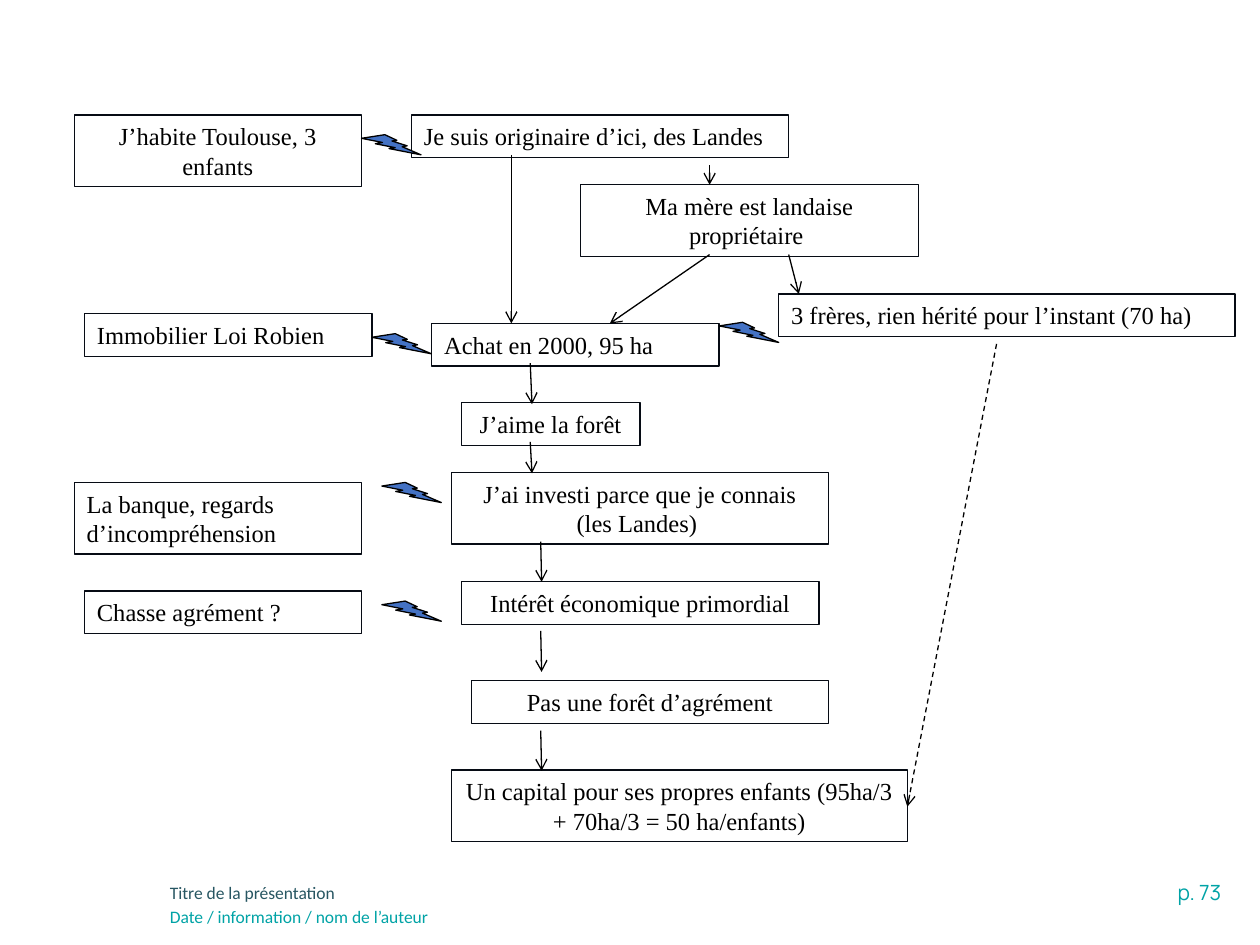
"""Build the slide that maps a forest owner's reasoning."""
from lxml import etree
from pptx import Presentation
from pptx import util as u
from pptx.dml.color import RGBColor
from pptx.enum import dml, shapes, text
from pptx.oxml.ns import qn

LEFT, CENTER, RIGHT = text.PP_ALIGN.LEFT, text.PP_ALIGN.CENTER, text.PP_ALIGN.RIGHT
ONE_LINE, TWO_LINES = 24.5, 41
TEAL = "00A3A6"

STATEMENTS = [
    ("J’habite Toulouse, 3 enfants", 42.5, 65.7, 164, TWO_LINES, CENTER),
    ("Je suis originaire d’ici, des Landes", 235.2, 65.7, 215.5, ONE_LINE, LEFT),
    ("Ma mère est landaise propriétaire ", 331.7, 105.6, 193, TWO_LINES, CENTER),
    ("3 frères, rien hérité pour l’instant (70 ha)", 445, 168, 260.8, ONE_LINE, LEFT),
    ("Achat en 2000, 95 ha", 246.7, 184.8, 164.3, ONE_LINE, LEFT),
    ("J’aime la forêt", 263.7, 230.2, 102, ONE_LINE, CENTER),
    ("Immobilier Loi Robien", 48.3, 179.2, 164.3, ONE_LINE, LEFT),
    ("J’ai investi parce que je connais (les Landes) ", 258, 270, 215.5, TWO_LINES, CENTER),
    ("La banque, regards d’incompréhension", 42.5, 275.7, 164, TWO_LINES, LEFT),
    ("Chasse agrément ?", 48.3, 337.7, 158.5, ONE_LINE, LEFT),
    ("Intérêt économique primordial", 263.7, 332.4, 204.3, ONE_LINE, CENTER),
    ("Pas une forêt d’agrément", 269.3, 388.9, 204.3, ONE_LINE, CENTER),
    ("Un capital pour ses propres enfants (95ha/3 + 70ha/3 = 50 ha/enfants)",
     258, 440, 260.5, TWO_LINES, CENTER),
]

ARROWS = [
    (405.5, 94.5, 405.5, 105.6),
    (450.7, 145.5, 456.5, 168),
    (405.5, 145.5, 348.5, 184.8),
    (292.2, 88.5, 292.2, 184.8),
    (303, 207.5, 304, 231),
    (303, 252.5, 304, 270.5),
    (309, 309.5, 309.5, 332.5),
    (309, 360.5, 309.5, 384),
    (309, 417.5, 309.5, 440.5),
]

CONFLICTS = [(206.6, 77), (212.5, 190.7), (411, 184.2), (218.2, 275.7), (218.2, 343.5)]


def color(value):
    """Return the colour for a hex string."""
    return RGBColor.from_string(value)


def style_line(line, value, width=0.75):
    """Give a line its colour and width."""
    line.color.rgb = color(value)
    line.width = u.Pt(width)


def add_text(slide, words, left, top, width, height, *, font="Times New Roman",
             size=14, ink="000000", align=LEFT):
    """Add a wrapped text box and return it."""
    shape = slide.shapes.add_textbox(u.Pt(left), u.Pt(top), u.Pt(width), u.Pt(height))
    frame = shape.text_frame
    frame.word_wrap = True
    frame.auto_size = text.MSO_AUTO_SIZE.SHAPE_TO_FIT_TEXT
    paragraph = frame.paragraphs[0]
    paragraph.alignment = align
    run = paragraph.add_run()
    run.text = words
    run.font.name = font
    run.font.size = u.Pt(size)
    run.font.color.rgb = color(ink)
    return shape


def add_statement(slide, words, left, top, width, height, align):
    """Add a framed statement."""
    shape = add_text(slide, words, left, top, width, height, align=align)
    style_line(shape.line, "060B14")


def add_arrow(slide, x1, y1, x2, y2, dashed=False):
    """Add an arrow from the first point to the second."""
    arrow = slide.shapes.add_connector(
        shapes.MSO_CONNECTOR.STRAIGHT, u.Pt(x1), u.Pt(y1), u.Pt(x2), u.Pt(y2))
    style_line(arrow.line, "000000")
    if dashed:
        arrow.line.dash_style = dml.MSO_LINE.DASH
    properties = arrow._element.spPr
    etree.SubElement(properties.find(qn("a:ln")), qn("a:tailEnd"), type="arrow")
    etree.SubElement(properties, qn("a:effectLst"))


def add_conflict(slide, left, top):
    """Add a lightning bolt between two opposed statements."""
    shape = slide.shapes.add_shape(
        shapes.MSO_SHAPE.LIGHTNING_BOLT, u.Pt(left), u.Pt(top), u.Pt(34), u.Pt(11.5))
    shape.shadow.inherit = False
    shape.fill.solid()
    shape.fill.fore_color.rgb = color("4472C4")
    style_line(shape.line, "000000")


def add_footer(slide):
    """Add the page number and the two footer lines."""
    add_text(slide, "p. 73", 540.9, 499, 164, 21.5,
             font="Manrope", size=12, ink=TEAL, align=RIGHT)
    add_text(slide, "Titre de la présentation", 90, 500.2, 528.5, 20,
             font="Calibri", size=10, ink="275662")
    add_text(slide, "Date / information / nom de l’auteur", 90, 514, 528.5, 20,
             font="Calibri", size=10, ink=TEAL)


def main():
    """Build and save the slide."""
    presentation = Presentation()
    presentation.slide_width, presentation.slide_height = u.Pt(720), u.Pt(540)
    slide = presentation.slides.add_slide(presentation.slide_layouts[6])
    add_footer(slide)
    for statement in STATEMENTS:
        add_statement(slide, *statement)
    for arrow in ARROWS:
        add_arrow(slide, *arrow)
    add_arrow(slide, 569.5, 196.5, 518.5, 461, dashed=True)
    for conflict in CONFLICTS:
        add_conflict(slide, *conflict)
    presentation.save("out.pptx")


if __name__ == "__main__":
    main()
